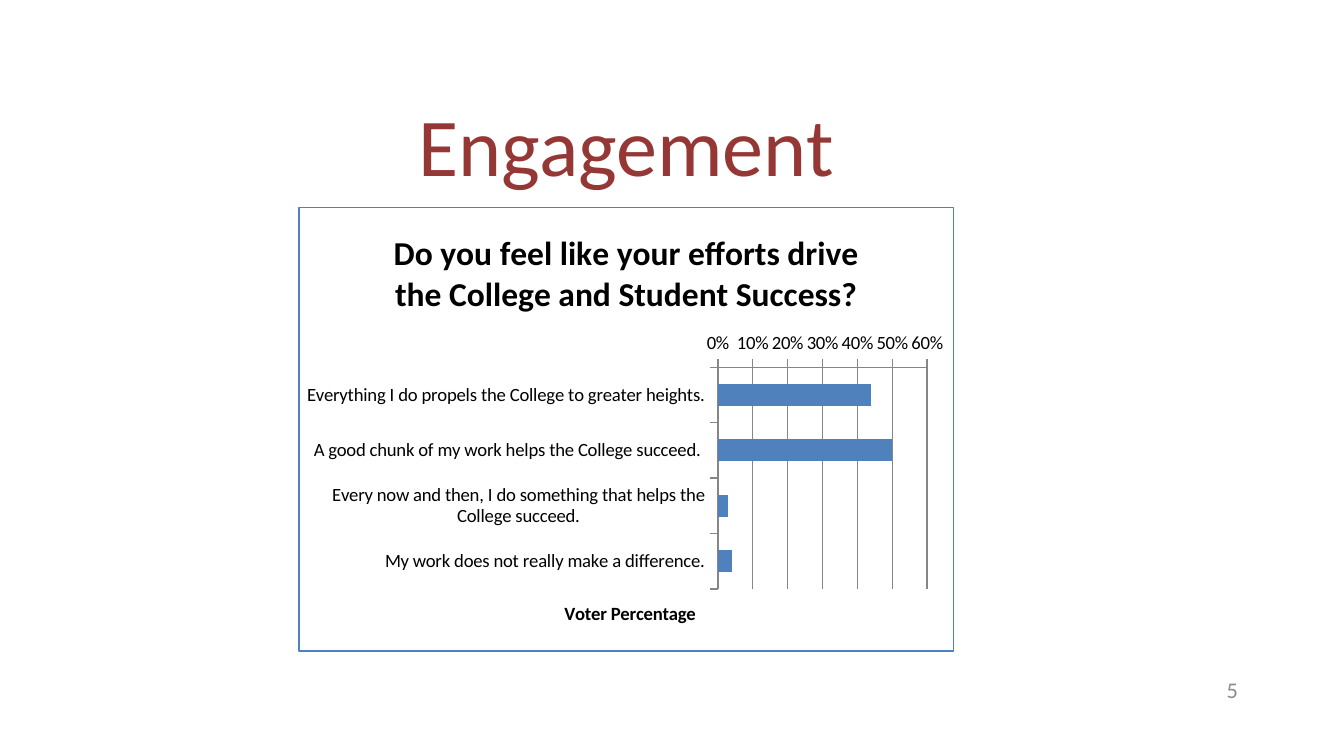
from lxml import etree
from pptx import Presentation
from pptx.chart.data import CategoryChartData
from pptx.dml.color import RGBColor
from pptx.enum.chart import XL_CHART_TYPE, XL_TICK_MARK
from pptx.enum.text import MSO_ANCHOR, PP_ALIGN
from pptx.oxml import parse_xml
from pptx.oxml.ns import nsdecls, qn
from pptx.util import Inches, Pt

BAR = XL_CHART_TYPE.BAR_CLUSTERED
OUT = XL_TICK_MARK.OUTSIDE
MIDDLE = MSO_ANCHOR.MIDDLE
CENTER, RIGHT = PP_ALIGN.CENTER, PP_ALIGN.RIGHT

FONT = "Calibri"
RED = RGBColor(0x95, 0x37, 0x35)
BLUE = RGBColor(0x4F, 0x81, 0xBD)
GRAY = RGBColor(0x8C, 0x8C, 0x8C)
LINE = RGBColor(0x86, 0x86, 0x86)
BLACK = RGBColor(0, 0, 0)

WIDE = Inches(10)
HIGH = WIDE * 9 // 16

# text, box, size, colour, alignment, line spacing
TEXTS = [
    ("Engagement", (0.35, 0.57, 8.62, 1.09), 44, RED, CENTER, 0.9),
    ("5", (7.06, 4.98, 2.25, 0.3), 12, GRAY, RIGHT, 1.0),
]
QUESTION = "Do you feel like your efforts drive the College and Student Success?"
VOTES = [
    ("Everything I do propels the College to greater heights.", 0.44),
    ("A good chunk of my work helps the College succeed. ", 0.5),
    ("Every now and then, I do something that helps the College succeed.", 0.03),
    ("My work does not really make a difference.", 0.04),
]
CHART_BOX = (2.22, 1.54, 4.88, 3.31)
PLOT = {"x": 0.64, "y": 0.36, "w": 0.32, "h": 0.5}
AXIS_TITLE = {"x": 0.4, "y": 0.88}


def add_text(slide, text, box, size, color, align, spacing):
    frame = slide.shapes.add_textbox(*map(Inches, box)).text_frame
    frame.word_wrap = True
    frame.vertical_anchor = MIDDLE
    para = frame.paragraphs[0]
    para.alignment = align
    para.line_spacing = spacing
    run = para.add_run()
    run.text = text
    style(run.font, size, color)


def style(font, size, color=BLACK, bold=False):
    font.name, font.size, font.bold = FONT, Pt(size), bold
    font.color.rgb = color


def set_title(owner, text, size):
    frame = owner.text_frame
    run = frame.paragraphs[0].add_run()
    run.text = text
    style(run.font, size, bold=True)


def place(parent, index, sizes, inner=False):
    """Give a chart part a manual layout, in fractions of the chart."""
    for old in parent.findall(qn("c:layout")):
        parent.remove(old)
    layout = parse_xml(f"<c:layout {nsdecls('c')}><c:manualLayout/></c:layout>")
    manual = layout[0]
    if inner:
        etree.SubElement(manual, qn("c:layoutTarget")).set("val", "inner")
    for key in ("x", "y"):
        etree.SubElement(manual, qn(f"c:{key}Mode")).set("val", "edge")
    for key, size in sizes.items():
        etree.SubElement(manual, qn(f"c:{key}")).set("val", str(size))
    parent.insert(index, layout)


def add_border(chart):
    border = parse_xml(
        f"<c:spPr {nsdecls('c', 'a')}><a:noFill/><a:ln w=\"{Pt(0.75)}\">"
        f"<a:solidFill><a:srgbClr val=\"{BLUE}\"/></a:solidFill></a:ln></c:spPr>")
    chart.element.find(qn("c:chart")).addnext(border)


def add_votes(slide):
    data = CategoryChartData(number_format="0%")
    data.categories = [label for label, _ in VOTES]
    data.add_series("Series 1", [share for _, share in VOTES])
    chart = slide.shapes.add_chart(BAR, *map(Inches, CHART_BOX), data).chart
    style(chart.font, 10)
    chart.has_legend = False
    chart.has_title = True
    set_title(chart.chart_title, QUESTION, 18)

    plot = chart.plots[0]
    plot.gap_width = 150
    plot.vary_by_categories = False
    fill = plot.series[0].format.fill
    fill.solid()
    fill.fore_color.rgb = BLUE

    cats, vals = chart.category_axis, chart.value_axis
    for axis in (cats, vals):
        axis.major_tick_mark = OUT
        axis.format.line.color.rgb = LINE
    cats.reverse_order = True
    vals.minimum_scale, vals.maximum_scale, vals.major_unit = 0, 0.6, 0.1
    vals.has_major_gridlines = True
    vals.major_gridlines.format.line.color.rgb = LINE
    vals.tick_labels.number_format = "0%"
    vals.tick_labels.number_format_is_linked = False
    vals.has_title = True
    set_title(vals.axis_title, "Voter Percentage", 10)

    place(vals.axis_title._element, 1, AXIS_TITLE)
    place(chart.element.find(".//" + qn("c:plotArea")), 0, PLOT, inner=True)
    add_border(chart)


def main():
    deck = Presentation()
    deck.slide_width, deck.slide_height = WIDE, HIGH
    slide = deck.slides.add_slide(deck.slide_layouts[6])
    add_votes(slide)
    for item in TEXTS:
        add_text(slide, *item)
    deck.save("out.pptx")


if __name__ == "__main__":
    main()
